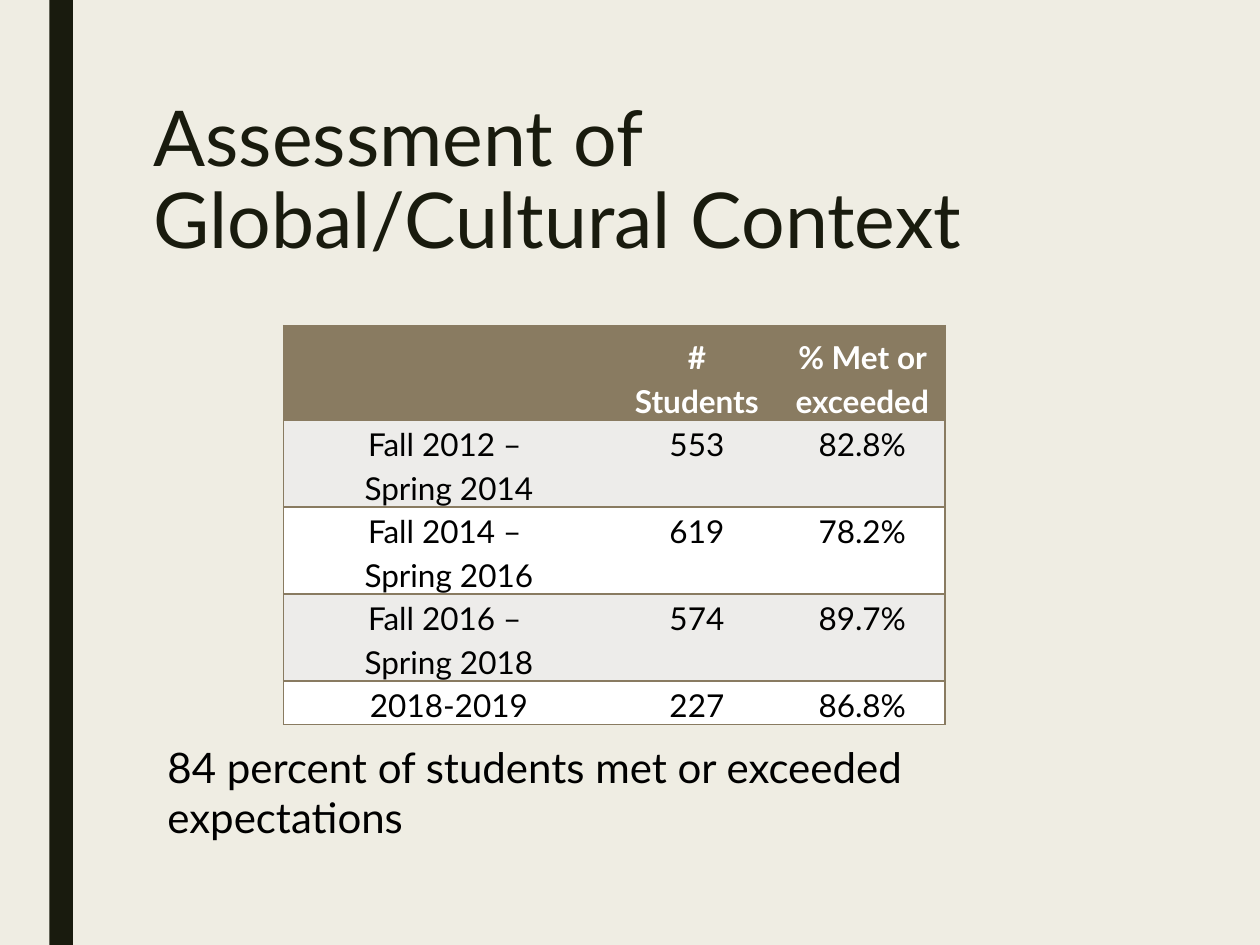
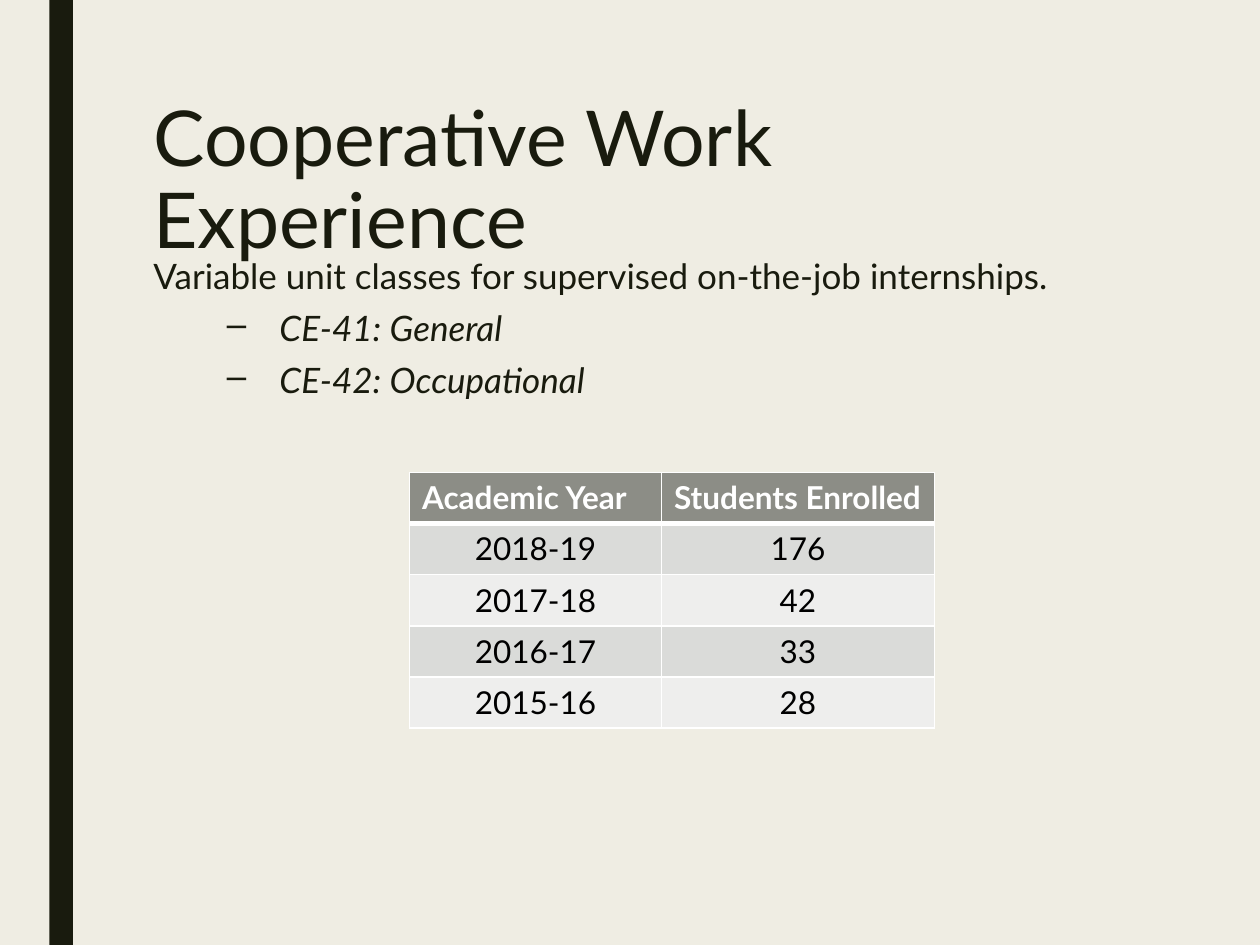
from lxml.etree import SubElement
from pptx import Presentation
from pptx.dml.color import RGBColor
from pptx.enum.shapes import MSO_SHAPE
from pptx.enum.text import MSO_ANCHOR, PP_ALIGN
from pptx.oxml.ns import qn
from pptx.util import Pt

FONT = "Lato"
BACKGROUND, DARK = "EFEDE3", "191B0E"
BLACK, WHITE = "000000", "FFFFFF"
BROWN, GRAY = "897B61", "8C8D86"

TITLE_BOX = (80.6, 54, 567.4, 116.6)


def color(hex_text):
    return RGBColor.from_string(hex_text)


def add_run(paragraph, text, size, hex_text, bold=False, italic=False):
    run = paragraph.add_run()
    run.text = text
    run.font.name = FONT
    run.font.size = Pt(size)
    run.font.bold = bold
    run.font.italic = italic
    run.font.color.rgb = color(hex_text)


def add_paragraph(text_frame, index):
    return text_frame.paragraphs[0] if index == 0 else text_frame.add_paragraph()


def add_text_frame(slide, box):
    text_frame = slide.shapes.add_textbox(*map(Pt, box)).text_frame
    text_frame.word_wrap = True
    return text_frame


def add_base_slide(presentation, title):
    slide = presentation.slides.add_slide(presentation.slide_layouts[6])
    slide.background.fill.solid()
    slide.background.fill.fore_color.rgb = color(BACKGROUND)
    # Side band
    band = slide.shapes.add_shape(
        MSO_SHAPE.RECTANGLE, Pt(28.2), 0, Pt(13.5), presentation.slide_height)
    band.shadow.inherit = False
    band.fill.solid()
    band.fill.fore_color.rgb = color(DARK)
    band.line.fill.background()
    # Title
    paragraph = add_text_frame(slide, TITLE_BOX).paragraphs[0]
    paragraph.line_spacing = 0.89
    add_run(paragraph, title, 44, DARK)
    return slide


def set_borders(cell, borders):
    """Draw the given sides as (colour, width) and clear the others."""
    properties = cell._tc.get_or_add_tcPr()
    for side in "LRTB":
        hex_text, width = borders.get(side, (None, 0))
        line = SubElement(properties, qn(f"a:ln{side}"), w=str(Pt(width)))
        if hex_text:
            fill = SubElement(line, qn("a:solidFill"))
            SubElement(fill, qn("a:srgbClr"), val=hex_text)
        else:
            SubElement(line, qn("a:noFill"))


def add_table(slide, left, top, widths, heights, rows, header_fill, band_fills,
              borders_at, style_cell):
    box = map(Pt, (left, top, sum(widths), sum(heights)))
    table = slide.shapes.add_table(len(rows), len(widths), *box).table
    for column, width in zip(table.columns, widths):
        column.width = Pt(width)
    for row_index, (row, height) in enumerate(zip(rows, heights)):
        table.rows[row_index].height = Pt(height)
        is_header = row_index == 0
        for column_index, text in enumerate(row):
            cell = table.cell(row_index, column_index)
            set_borders(cell, borders_at(row_index, column_index))
            cell.fill.solid()
            cell.fill.fore_color.rgb = color(
                header_fill if is_header else band_fills[(row_index - 1) % 2])
            for index, line in enumerate(text.split("\n") if text else []):
                paragraph = add_paragraph(cell.text_frame, index)
                add_run(paragraph, line, 18, WHITE if is_header else BLACK, bold=is_header)
            style_cell(cell, is_header)


def add_assessment_table(slide, left, top):
    rows = [
        ("", "# Students", "% Met or exceeded"),
        ("Fall 2012 – \nSpring 2014", "553", "82.8%"),
        ("Fall 2014 – \nSpring 2016", "619", "78.2%"),
        ("Fall 2016 – \nSpring 2018", "574", "89.7%"),
        ("2018-2019", "227", "86.8%"),
    ]

    def borders_at(row, column):
        sides = "TB" + {0: "L", 2: "R"}.get(column, "")
        return {side: (BROWN, 1) for side in sides}

    def style_cell(cell, is_header):
        cell.margin_left = cell.margin_right = Pt(5)
        cell.margin_top = cell.margin_bottom = 0
        cell.vertical_anchor = MSO_ANCHOR.BOTTOM if is_header else MSO_ANCHOR.TOP
        for paragraph in cell.text_frame.paragraphs:
            paragraph.alignment = PP_ALIGN.CENTER
            paragraph.line_spacing = 1.15

    add_table(slide, left, top, [189, 94.5, 94.5], [54, 49.7, 49.7, 49.7, 24.8], rows,
              BROWN, ("EDECEA", WHITE), borders_at, style_cell)


def add_enrollment_table(slide, left, top):
    rows = [
        ("Academic Year", "Students Enrolled"),
        ("2018-19", "176"),
        ("2017-18", "42"),
        ("2016-17", "33"),
        ("2015-16", "28"),
    ]

    def borders_at(row, column):
        borders = {side: (WHITE, 1) for side in "LRTB"}
        if row < 2:
            borders["B" if row == 0 else "T"] = (WHITE, 3)
        return borders

    def style_cell(cell, is_header):
        if not is_header:
            cell.text_frame.paragraphs[0].alignment = PP_ALIGN.CENTER

    add_table(slide, left, top, [144, 156], [29.2] * len(rows), rows,
              GRAY, ("DADBD9", "EEEEED"), borders_at, style_cell)


def add_class_list(slide, box):
    text_frame = add_text_frame(slide, box)
    lines = ["Variable unit classes for supervised on-the-job internships.",
             "CE-41: General", "CE-42: Occupational"]
    for index, line in enumerate(lines):
        is_item = index > 0
        paragraph = add_paragraph(text_frame, index)
        paragraph.line_spacing = 0.94
        paragraph.space_before = Pt(5 if is_item else 10)
        paragraph.space_after = Pt(2)
        if is_item:
            paragraph.level = 1
            properties = paragraph._p.get_or_add_pPr()
            properties.set("marL", str(Pt(72)))
            properties.set("indent", str(Pt(-30)))
            SubElement(properties, qn("a:buChar"), char="–")
        add_run(paragraph, line, 20, DARK, italic=is_item)


def add_assessment_slide(presentation):
    slide = add_base_slide(presentation, "Assessment of Global/Cultural Context")
    add_assessment_table(slide, 162, 186)
    # Summary below the table
    summary = add_text_frame(slide, (88.6, 420, 559.4, 36))
    add_run(summary.paragraphs[0],
            "84 percent of students met or exceeded expectations", 24, BLACK)


def add_work_experience_slide(presentation):
    slide = add_base_slide(presentation, "Cooperative Work Experience")
    add_class_list(slide, (80.6, 144, 567.4, 318))
    add_enrollment_table(slide, 234, 270)


def main():
    presentation = Presentation()
    presentation.slide_width, presentation.slide_height = Pt(720), Pt(540)
    add_assessment_slide(presentation)
    add_work_experience_slide(presentation)
    presentation.save("out.pptx")


if __name__ == "__main__":
    main()
